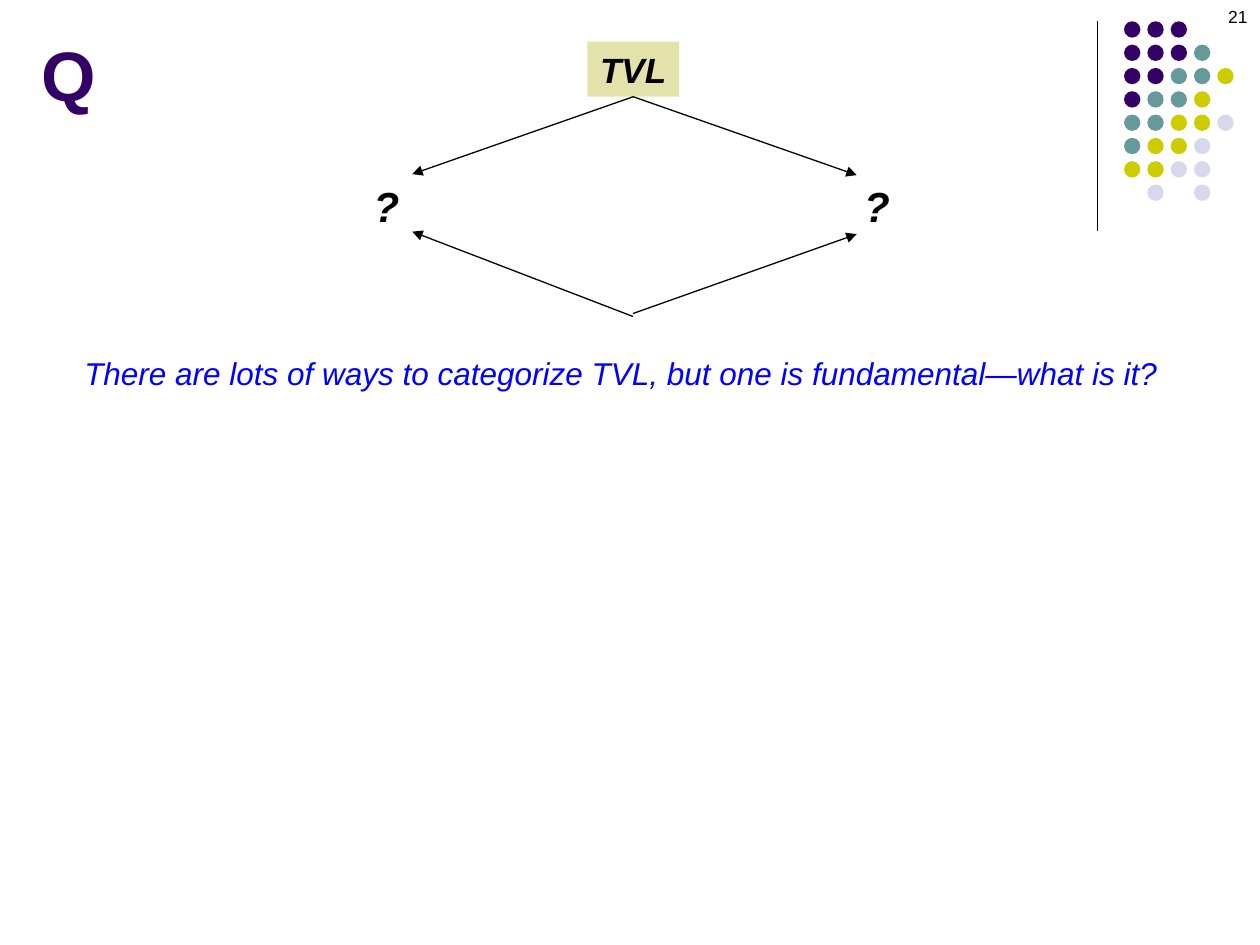
"""Build the TVL question slide."""
from lxml.etree import SubElement
from pptx import Presentation
from pptx.dml.color import RGBColor
from pptx.enum.shapes import MSO_CONNECTOR, MSO_SHAPE
from pptx.enum.text import MSO_ANCHOR, MSO_AUTO_SIZE, PP_ALIGN
from pptx.oxml.ns import qn
from pptx.util import Cm, Pt

COLORS = {
    "black": "000000", "purple": "330066", "teal": "669999", "olive": "CCCC00",
    "lavender": "D8D8EC", "sand": "E2E2AA", "blue": "0000FF",
}
TITLE = ("Q", (0.58, 0.51, 1.63, 1.96), 40, "purple", True, False, PP_ALIGN.LEFT)
ROOT = ("TVL", (11.84, 0.84, 1.85, 1.11), 20, "black", True, True, PP_ALIGN.CENTER)
TEXTS = [
    ("?", (7.26, 3.51, 1.04, 1.27), 24, "black", True, True, PP_ALIGN.RIGHT),
    ("?", (17.17, 3.51, 1.04, 1.27), 24, "black", True, True, PP_ALIGN.LEFT),
    ("There are lots of ways to categorize TVL, but one is fundamental—what is it?",
     (1.45, 7.01, 22.35, 1.02), 18, "blue", False, True, PP_ALIGN.LEFT),
    ("21", (19.48, 0, 5.92, 1.27), 10, "black", False, False, PP_ALIGN.RIGHT),
]
TOP_ARROWS = [((12.76, 1.95), (8.31, 3.51)), ((12.76, 1.95), (17.27, 3.53))]
BOTTOM_ARROWS = [((12.76, 6.38), (8.31, 4.67)), ((12.76, 6.32), (17.27, 4.72))]
DIVIDER = ((22.12, 0.43), (22.12, 4.65))
DOT_ROWS = ["PPP", "PPPT", "PPTTO", "PTTO", "TTOOL", "TOOL", "OOLL", " L L"]
DOT_COLORS = {"P": "purple", "T": "teal", "O": "olive", "L": "lavender"}
DOT_LEFT, DOT_TOP, DOT_STEP, DOT_SIZE = 22.66, 0.43, 0.47, 0.33


def color(name):
    return RGBColor.from_string(COLORS[name])


def write(box, text, size, tone, bold, italic, align):
    frame = box.text_frame
    frame.text = text
    frame.word_wrap = False
    frame.auto_size = MSO_AUTO_SIZE.NONE
    frame.vertical_anchor = MSO_ANCHOR.TOP
    paragraph = frame.paragraphs[0]
    paragraph.alignment = align
    font = paragraph.font
    font.name, font.size, font.bold, font.italic = "Arial", Pt(size), bold, italic
    font.color.rgb = color(tone)


def add_filled(shapes, kind, place, tone):
    shape = shapes.add_shape(kind, *map(Cm, place))
    shape.shadow.inherit = False
    shape.fill.solid()
    shape.fill.fore_color.rgb = color(tone)
    shape.line.fill.background()
    return shape


def add_line(shapes, start, end, arrow=True):
    line = shapes.add_connector(MSO_CONNECTOR.STRAIGHT, *map(Cm, start + end))
    line.line.color.rgb = color("black")
    line.line.width = Pt(0.75)
    if arrow:
        SubElement(line.line._get_or_add_ln(), qn("a:tailEnd"), type="triangle")
    SubElement(line._element.spPr, qn("a:effectLst"))
    return line


def add_dots(shapes):
    for row, marks in enumerate(DOT_ROWS):
        for column, mark in enumerate(marks):
            if mark in DOT_COLORS:
                place = (DOT_LEFT + column * DOT_STEP, DOT_TOP + row * DOT_STEP,
                         DOT_SIZE, DOT_SIZE)
                add_filled(shapes, MSO_SHAPE.OVAL, place, DOT_COLORS[mark])


def main():
    deck = Presentation()
    deck.slide_width, deck.slide_height = Cm(25.4), Cm(19.05)
    page = deck.slides.add_slide(deck.slide_layouts[5])
    shapes = page.shapes

    text, place, *style = TITLE
    title = shapes.title
    title.left, title.top, title.width, title.height = map(Cm, place)
    write(title, text, *style)

    add_line(shapes, *DIVIDER, arrow=False)
    add_dots(shapes.add_group_shape().shapes)

    text, place, *style = ROOT
    root = add_filled(shapes, MSO_SHAPE.RECTANGLE, place, "sand")
    write(root, text, *style)
    root.text_frame.vertical_anchor = MSO_ANCHOR.MIDDLE

    for text, place, *style in TEXTS:
        write(shapes.add_textbox(*map(Cm, place)), text, *style)
    for start, end in TOP_ARROWS:
        add_line(shapes, start, end).begin_connect(root, 2)
    for start, end in BOTTOM_ARROWS:
        add_line(shapes, start, end)

    deck.save("out.pptx")


if __name__ == "__main__":
    main()
